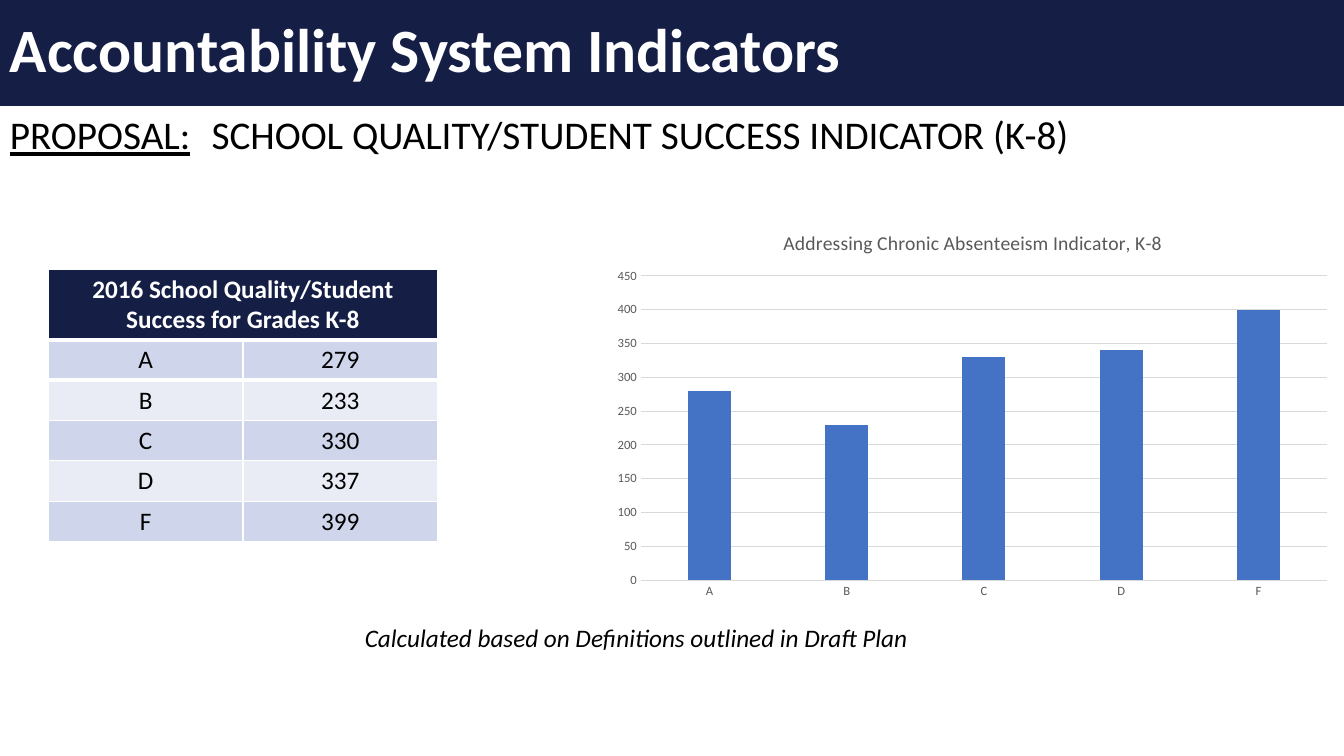
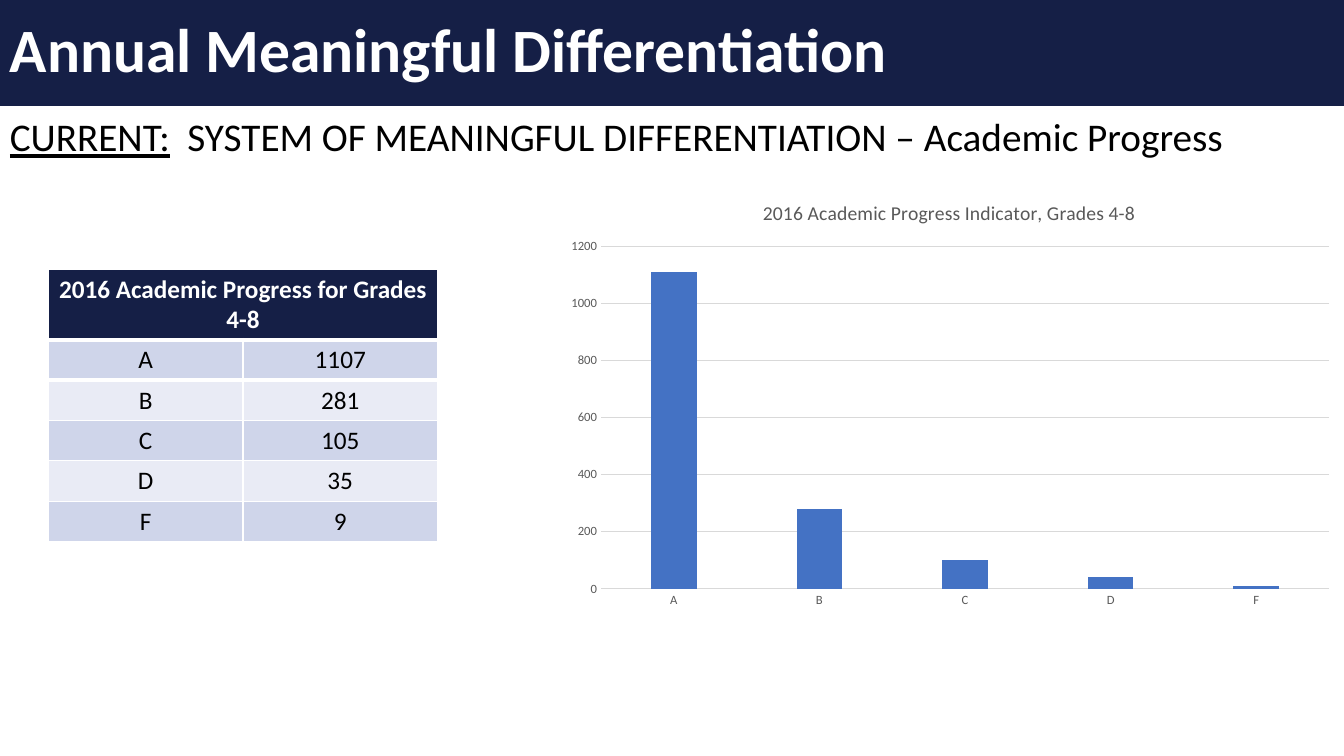
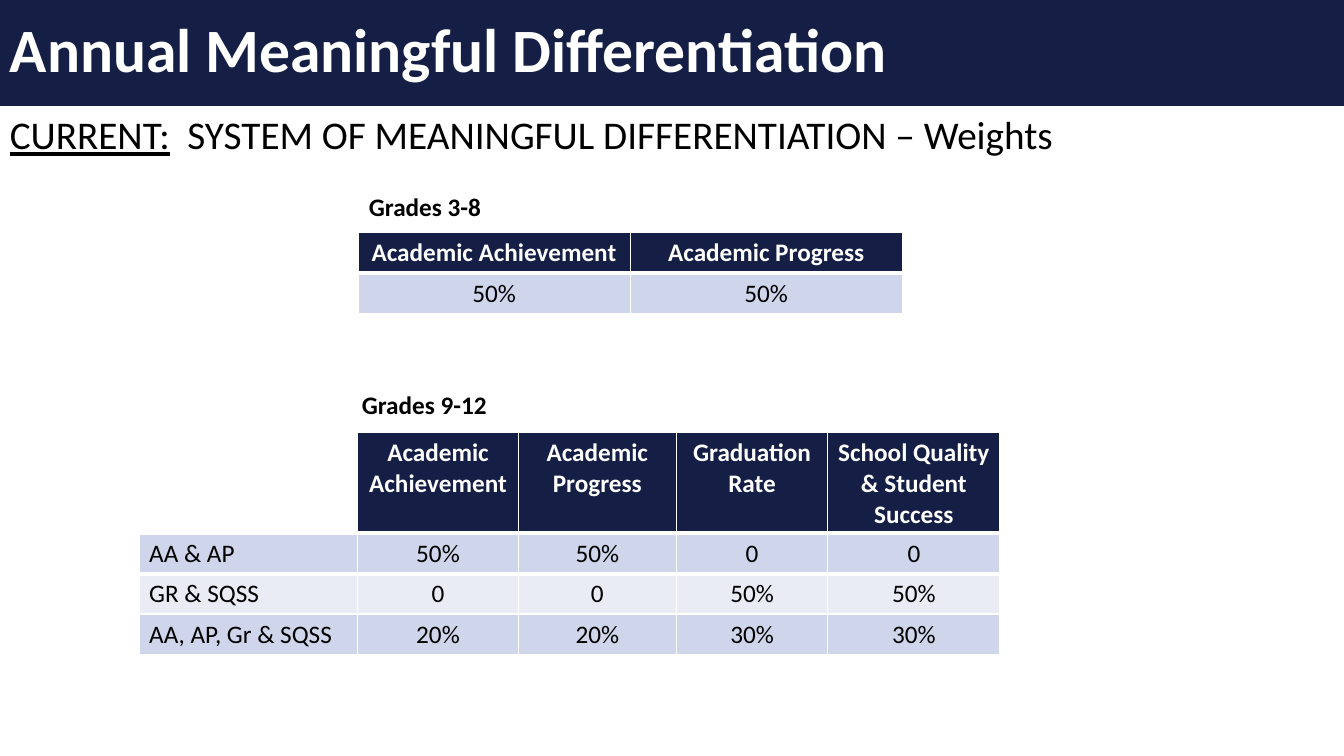
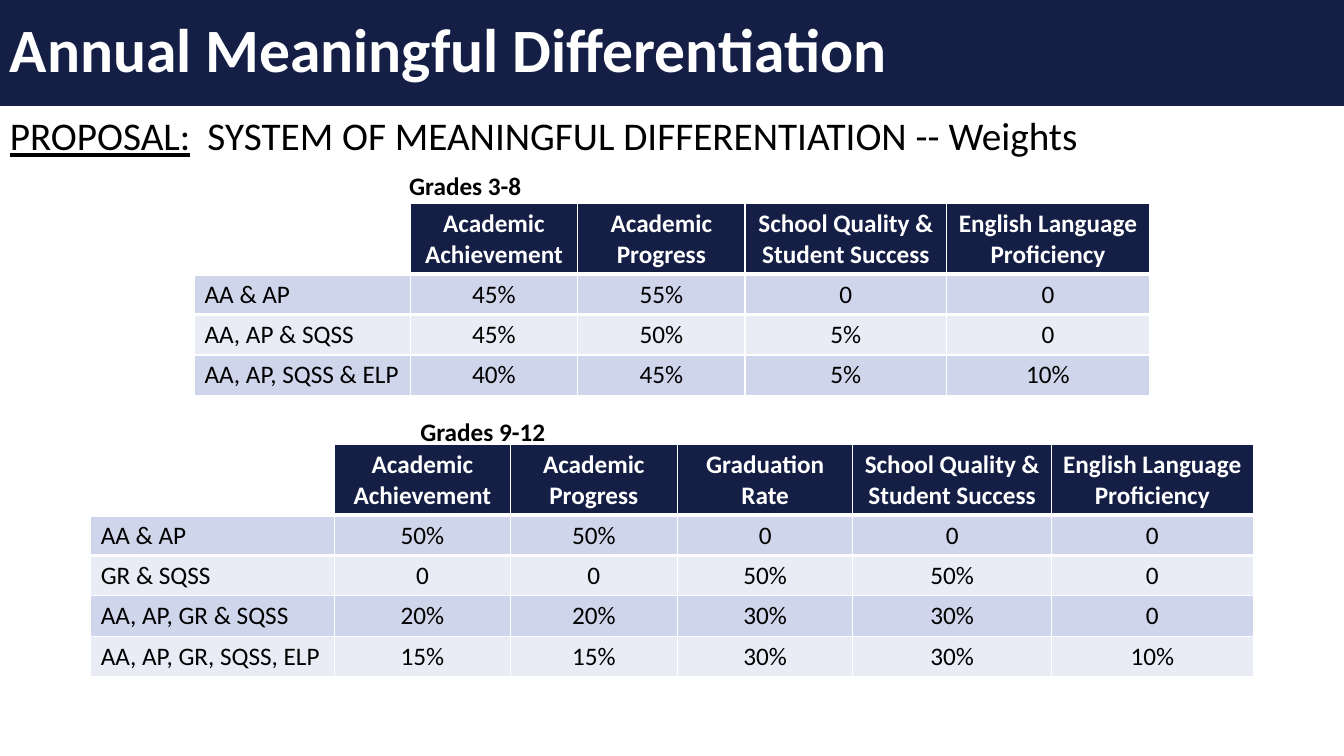
from lxml.etree import SubElement
from pptx import Presentation
from pptx.chart.data import CategoryChartData
from pptx.dml.color import RGBColor
from pptx.enum.chart import XL_CHART_TYPE as ChartType, XL_TICK_MARK as TickMark
from pptx.enum.shapes import MSO_SHAPE as Shape
from pptx.enum.text import MSO_ANCHOR as Anchor, PP_ALIGN as Align
from pptx.oxml import parse_xml
from pptx.oxml.ns import nsdecls, qn
from pptx.util import Inches, Pt

NAVY = RGBColor(0x15, 0x1F, 0x46)
WHITE = RGBColor(0xFF, 0xFF, 0xFF)
BLACK = RGBColor(0, 0, 0)
GRAY = RGBColor(0x59, 0x59, 0x59)
RULE = RGBColor(0xD9, 0xD9, 0xD9)
BLUE = RGBColor(0x44, 0x72, 0xC4)
BANDS = RGBColor(0xCF, 0xD5, 0xEA), RGBColor(0xE9, 0xEB, 0xF5)
FONT = "Calibri"
SLIDE_WIDTH, SLIDE_HEIGHT = 13.33, 7.5
BAND_HEIGHT = 1.05
ROW_HEIGHT = 0.4

ACHIEVEMENT, PROGRESS = "Academic Achievement", "Academic Progress"
GRADUATION, QUALITY = "Graduation Rate", "School Quality & Student Success"
ENGLISH = "English Language Proficiency"
DIFFERENTIATION = "Annual Meaningful Differentiation"

SLIDES = [
    {
        "title": "Accountability System Indicators",
        "heading": ("PROPOSAL:", "SCHOOL QUALITY/STUDENT SUCCESS INDICATOR (K-8)"),
        "heading_box": (1.05, 10.9, 2),
        "grades": {
            "header": "2016 School Quality/Student Success for Grades K-8",
            "counts": {"A": 279, "B": 233, "C": 330, "D": 337, "F": 399},
            "chart_title": "Addressing Chronic Absenteeism Indicator, K-8",
            "chart_box": (5.99, 2.11, 7.32, 3.92),
            "plot": (0.05, 0.16, 0.93, 0.77),
            "scale": (450, 50),
        },
        "labels": [("Calculated based on Definitions outlined in Draft Plan",
                    (3.52, 6.12, 5.87), {"italic": True})],
    },
    {
        "title": DIFFERENTIATION,
        "heading": ("CURRENT:", "SYSTEM OF MEANINGFUL DIFFERENTIATION – Academic Progress"),
        "heading_box": (1.07, 12.4, 1.76),
        "grades": {
            "header": "2016 Academic Progress for Grades 4-8",
            "counts": {"A": 1107, "B": 281, "C": 105, "D": 35, "F": 9},
            "chart_title": "2016 Academic Progress Indicator, Grades 4-8",
            "chart_box": (5.49, 1.8, 7.85, 4.3),
            "plot": (0.06, 0.15, 0.92, 0.79),
            "scale": (1200, 200),
        },
    },
    {
        "title": DIFFERENTIATION,
        "heading": ("CURRENT:", "SYSTEM OF MEANINGFUL DIFFERENTIATION – Weights"),
        "heading_box": (1.05, SLIDE_WIDTH, 1.76),
        "labels": [("Grades 3-8", (3.56, 1.85, 1.4), {"bold": True}),
                   ("Grades 9-12", (3.49, 3.81, 1.5), {"bold": True})],
        "weights": [
            ((3.55, 2.31), ROW_HEIGHT, [2.7, 2.7], [
                (ACHIEVEMENT, PROGRESS),
                ("50%", "50%"),
            ]),
            ((1.38, 4.29), 1, [2.17, 1.59, 1.57, 1.5, 1.71], [
                ("", ACHIEVEMENT, PROGRESS, GRADUATION, QUALITY),
                ("AA & AP", "50%", "50%", "0", "0"),
                ("GR & SQSS", "0", "0", "50%", "50%"),
                ("AA, AP, Gr & SQSS", "20%", "20%", "30%", "30%"),
            ]),
        ],
    },
    {
        "title": DIFFERENTIATION,
        "heading": ("PROPOSAL:", "SYSTEM OF MEANINGFUL DIFFERENTIATION -- Weights"),
        "heading_box": (1.06, 11, 1.96),
        "labels": [("Grades 3-8", (3.96, 1.64, 1.4), {"bold": True}),
                   ("Grades 9-12", (4.07, 4.08, 1.5), {"bold": True})],
        "weights": [
            ((1.93, 2.02), 0.7, [2.14, 1.66, 1.66, 2, 2.01], [
                ("", ACHIEVEMENT, PROGRESS, QUALITY, ENGLISH),
                ("AA & AP", "45%", "55%", "0", "0"),
                ("AA, AP & SQSS", "45%", "50%", "5%", "0"),
                ("AA, AP, SQSS & ELP", "40%", "45%", "5%", "10%"),
            ]),
            ((0.9, 4.41), 0.7, [2.42, 1.74, 1.66, 1.74, 1.97, 2], [
                ("", ACHIEVEMENT, PROGRESS, GRADUATION, QUALITY, ENGLISH),
                ("AA & AP", "50%", "50%", "0", "0", "0"),
                ("GR & SQSS", "0", "0", "50%", "50%", "0"),
                ("AA, AP, GR & SQSS", "20%", "20%", "30%", "30%", "0"),
                ("AA, AP, GR, SQSS, ELP", "15%", "15%", "30%", "30%", "10%"),
            ]),
        ],
    },
]


def style_font(font, size, color, bold=False, italic=False):
    font.name, font.size, font.bold, font.italic = FONT, Pt(size), bold, italic
    font.color.rgb = color


def write(frame, text, size=18, color=BLACK, align=Align.LEFT, lead="", tab=None,
          spacing=None, **style):
    frame.word_wrap = True
    paragraph = frame.paragraphs[0]
    paragraph.alignment = align
    if spacing:
        paragraph.line_spacing = spacing
    if tab:
        stops = SubElement(paragraph._p.get_or_add_pPr(), qn("a:tabLst"))
        SubElement(stops, qn("a:tab"), pos=str(Inches(tab)), algn="l")
        text = "\t" + text
    for words, underline in ((lead, True), (text, False)):
        if words:
            run = paragraph.add_run()
            run.text = words
            style_font(run.font, size, color, **style)
            run.font.underline = underline


def add_label(slide, text, box, height=0.4, **style):
    left, top, width = map(Inches, box)
    write(slide.shapes.add_textbox(left, top, width, Inches(height)).text_frame, text, **style)


def add_heading(slide, title, heading, heading_box):
    band = slide.shapes.add_shape(Shape.RECTANGLE, 0, 0, Inches(SLIDE_WIDTH), Inches(BAND_HEIGHT))
    band.shadow.inherit = False
    band.fill.solid()
    band.fill.fore_color.rgb = NAVY
    band.line.fill.background()
    band.text_frame.vertical_anchor = Anchor.MIDDLE
    write(band.text_frame, title, size=44, color=WHITE, bold=True, spacing=0.9)
    lead, text = heading
    top, width, tab = heading_box
    add_label(slide, text, (0, top, width), height=0.57, size=28, align=Align.JUSTIFY,
              lead=lead, tab=tab)


def add_border(cell, side, width):
    cell._tc.get_or_add_tcPr().insert(0, parse_xml(
        f'<a:{side} {nsdecls("a")} w="{Pt(width)}"><a:solidFill>'
        f'<a:srgbClr val="{WHITE}"/></a:solidFill></a:{side}>'))


def add_grid(slide, corner, header_height, widths, rows):
    left, top = map(Inches, corner)
    heights = [header_height] + [ROW_HEIGHT] * (len(rows) - 1)
    grid = slide.shapes.add_table(len(rows), len(widths), left, top,
                                  Inches(sum(widths)), Inches(sum(heights))).table
    for column, width in zip(grid.columns, widths):
        column.width = Inches(width)
    for c in range(len(widths)):
        add_border(grid.cell(0, c), "lnB", 3)
        add_border(grid.cell(1, c), "lnT", 3)
    for r, (entries, height) in enumerate(zip(rows, heights)):
        grid.rows[r].height = Inches(height)
        for c, entry in enumerate(entries):
            cell = grid.cell(r, c)
            header = r == 0
            if header and not entry:
                cell.fill.background()
                continue
            cell.fill.solid()
            cell.fill.fore_color.rgb = NAVY if header else BANDS[(r - 1) % 2]
            row_name = c == 0 and not rows[0][0]
            write(cell.text_frame, entry, color=WHITE if header else BLACK, bold=header,
                  align=Align.LEFT if row_name else Align.CENTER)
    return grid


def place_plot(chart, plot):
    area = chart._chartSpace.chart.plotArea
    for layout in area.findall(qn("c:layout")):
        area.remove(layout)
    places = "".join(f'<c:{key} val="{value}"/>' for key, value in zip("xywh", plot))
    area.insert(0, parse_xml(
        f'<c:layout {nsdecls("c")}><c:manualLayout><c:layoutTarget val="inner"/>'
        f'<c:xMode val="edge"/><c:yMode val="edge"/>{places}</c:manualLayout></c:layout>'))


def add_columns(slide, counts, chart_title, chart_box, plot, scale):
    data = CategoryChartData()
    data.categories = list(counts)
    data.add_series("Series 1", [round(count, -1) for count in counts.values()])
    chart = slide.shapes.add_chart(ChartType.COLUMN_CLUSTERED, *map(Inches, chart_box), data).chart
    style_font(chart.font, 10, BLACK)
    chart.has_legend = False
    chart.has_title = True
    write(chart.chart_title.text_frame, chart_title, size=14, color=GRAY, align=Align.CENTER)
    columns = chart.plots[0]
    columns.gap_width, columns.overlap, columns.vary_by_categories = 219, -27, False
    fill = columns.series[0].format.fill
    fill.solid()
    fill.fore_color.rgb = BLUE
    grade_axis, count_axis = chart.category_axis, chart.value_axis
    for axis in (grade_axis, count_axis):
        axis.major_tick_mark = axis.minor_tick_mark = TickMark.NONE
        style_font(axis.tick_labels.font, 9, GRAY)
    count_axis.minimum_scale = 0
    count_axis.maximum_scale, count_axis.major_unit = scale
    count_axis.format.line.fill.background()
    for line in (grade_axis.format.line, count_axis.major_gridlines.format.line):
        line.color.rgb = RULE
        line.width = Pt(0.75)
    place_plot(chart, plot)


def add_grades(slide, header, counts, **chart):
    rows = [(header,)] + [(grade, str(count)) for grade, count in counts.items()]
    grid = add_grid(slide, (0.48, 2.67), 0.7, [1.93, 1.93], rows)
    grid.cell(0, 0).merge(grid.cell(0, 1))
    add_columns(slide, counts, **chart)


def main():
    deck = Presentation()
    deck.slide_width, deck.slide_height = Inches(SLIDE_WIDTH), Inches(SLIDE_HEIGHT)
    for content in SLIDES:
        slide = deck.slides.add_slide(deck.slide_layouts[6])
        add_heading(slide, content["title"], content["heading"], content["heading_box"])
        if "grades" in content:
            add_grades(slide, **content["grades"])
        for text, box, style in content.get("labels", []):
            add_label(slide, text, box, **style)
        for weights in content.get("weights", []):
            add_grid(slide, *weights)
    deck.save("out.pptx")


if __name__ == "__main__":
    main()
